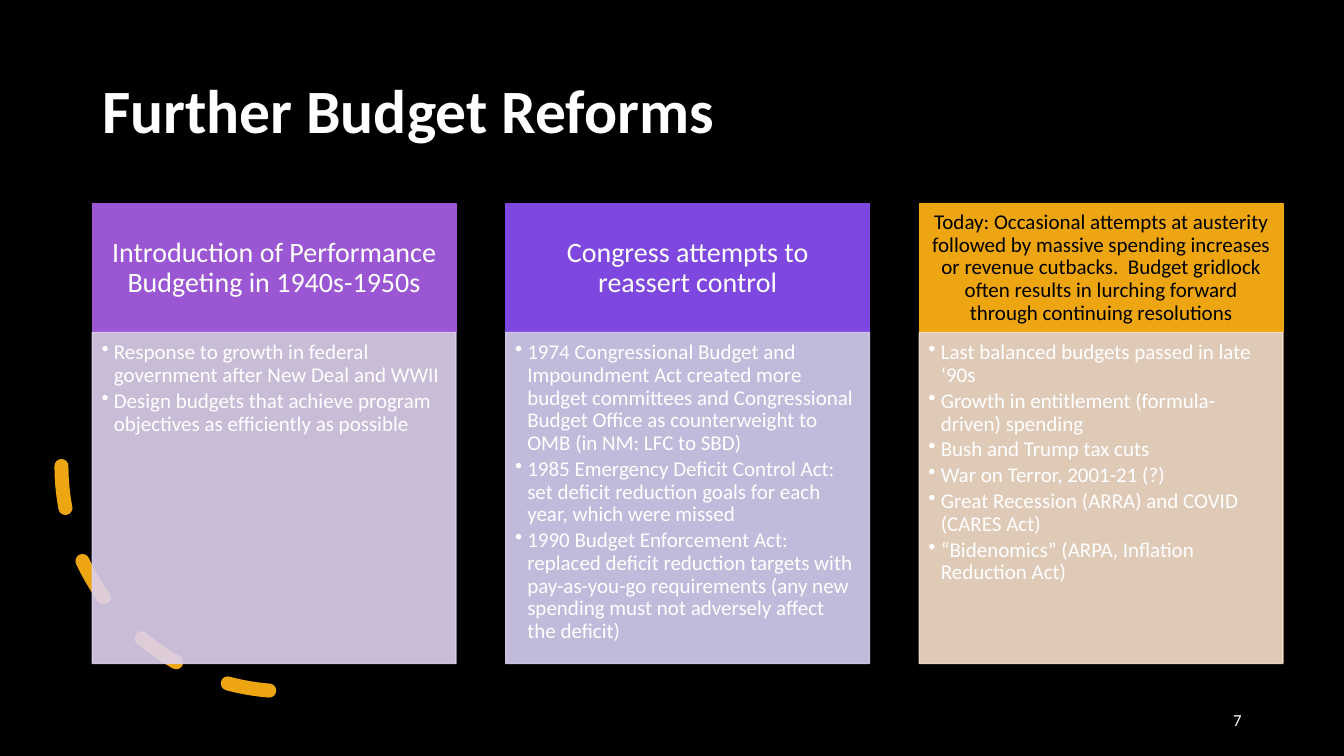
"""Build the slide on further budget reforms."""
from lxml.etree import SubElement
from pptx import Presentation
from pptx.dml.color import RGBColor
from pptx.enum.dml import MSO_LINE
from pptx.enum.shapes import MSO_SHAPE
from pptx.enum.text import MSO_ANCHOR, PP_ALIGN
from pptx.oxml.ns import qn
from pptx.util import Cm, Pt

COLORS = {
    "black": "000000", "white": "FFFFFF", "gold": "EEA512",
    "orchid": "9B57D3", "pale_orchid": "DED1EF",
    "violet": "7E48E0", "pale_violet": "D8CFF3",
    "pale_gold": "F8E1CC",
}

COLUMNS = [
    {
        "heading": "Introduction of Performance Budgeting in 1940s-1950s",
        "heading_format": {"size": 20, "color": "white"},
        "margins": (0.4, 0.23, 0.4, 0.23),
        "fills": ("orchid", "pale_orchid"),
        "points": [
            "Response to growth in federal government after New Deal and WWII",
            "Design budgets that achieve program objectives as efficiently as possible",
        ],
    },
    {
        "heading": "Congress attempts to reassert control",
        "heading_format": {"size": 20, "color": "white"},
        "margins": (0.4, 0.23, 0.4, 0.23),
        "fills": ("violet", "pale_violet"),
        "points": [
            "1974 Congressional Budget and Impoundment Act created more budget committees "
            "and Congressional Budget Office as counterweight to OMB (in NM: LFC to SBD)",
            "1985 Emergency Deficit Control Act: set deficit reduction goals for each year, "
            "which were missed",
            "1990 Budget Enforcement Act: replaced deficit reduction targets with "
            "pay-as-you-go requirements (any new spending must not adversely affect the deficit)",
        ],
    },
    {
        "heading": "Today: Occasional attempts at austerity followed by massive spending "
                   "increases or revenue cutbacks.  Budget gridlock often results in lurching "
                   "forward through continuing resolutions",
        "heading_format": {"size": 15, "color": "black"},
        "margins": (0.3, 0.18, 0.3, 0.18),
        "fills": ("gold", "pale_gold"),
        "points": [
            "Last balanced budgets passed in late ‘90s",
            "Growth in entitlement (formula-driven) spending",
            "Bush and Trump tax cuts",
            "War on Terror, 2001-21 (?)",
            "Great Recession (ARRA) and COVID (CARES Act)",
            "“Bidenomics” (ARPA, Inflation Reduction Act)",
        ],
    },
]


def rgb(name):
    return RGBColor.from_string(COLORS[name])


def write(frame, texts, size=15, color="white", bold=False, align=PP_ALIGN.LEFT,
          anchor=MSO_ANCHOR.MIDDLE, margins=(0.25, 0.13, 0.25, 0.13), bullet=False):
    frame.word_wrap = True
    frame.vertical_anchor = anchor
    (frame.margin_left, frame.margin_top,
     frame.margin_right, frame.margin_bottom) = map(Cm, margins)
    for index, text in enumerate(texts):
        para = frame.paragraphs[0] if index == 0 else frame.add_paragraph()
        para.alignment = align
        para.line_spacing = 0.9
        if bullet:
            para.space_after = Pt(2.25)
            properties = para._p.get_or_add_pPr()
            properties.set("marL", str(Cm(0.31)))
            properties.set("indent", str(-Cm(0.31)))
            SubElement(properties, qn("a:buChar")).set("char", "•")
        span = para.add_run()
        span.text = text
        span.font.name = "Calibri"
        span.font.size = Pt(size)
        span.font.bold = bold
        span.font.color.rgb = rgb(color)


class Page:
    def __init__(self, deck, background):
        self.slide = deck.slides.add_slide(deck.slide_layouts[6])
        self.slide.background.fill.solid()
        self.slide.background.fill.fore_color.rgb = rgb(background)

    def text(self, words, place, **style):
        box = self.slide.shapes.add_textbox(*map(Cm, place))
        write(box.text_frame, [words], **style)

    def dashed_arc(self, place, color):
        arc = self.slide.shapes.add_shape(MSO_SHAPE.ARC, *map(Cm, place))
        arc.shadow.inherit = False
        arc.fill.background()
        arc.rotation = 90
        arc._element.spPr.xfrm.set("flipV", "1")
        arc.line.color.rgb = rgb(color)
        arc.line.width = Pt(10)
        arc.line.dash_style = MSO_LINE.DASH
        arc.line._ln.set("cap", "rnd")

    def panel(self, texts, place, fill, opacity=100, **style):
        box = self.slide.shapes.add_shape(MSO_SHAPE.RECTANGLE, *map(Cm, place))
        box.shadow.inherit = False
        box.line.width = Pt(1)
        box.fill.solid()
        box.fill.fore_color.rgb = rgb(fill)
        box.line.color.rgb = rgb(fill)
        if opacity < 100:
            for tint in box._element.spPr.iter(qn("a:srgbClr")):
                SubElement(tint, qn("a:alpha")).set("val", str(opacity * 1000))
        write(box.text_frame, texts, **style)


def main():
    deck = Presentation()
    deck.slide_width, deck.slide_height = Cm(33.87), Cm(19.05)
    page = Page(deck, "black")
    page.text("Further Budget Reforms", (2.33, 1.01, 29.21, 3.68), size=44, bold=True)
    page.dashed_arc((1.55, 6.07, 11.35, 11.35), "gold")
    left, pitch, width = 2.33, 10.42, 9.16
    top, heading_height, body_height = 5.13, 3.25, 8.34
    for index, column in enumerate(COLUMNS):
        x = left + index * pitch
        strong, pale = column["fills"]
        page.panel([column["heading"]], (x, top, width, heading_height), strong,
                   align=PP_ALIGN.CENTER, margins=column["margins"],
                   **column["heading_format"])
        page.panel(column["points"], (x, top + heading_height, width, body_height), pale,
                   opacity=90, anchor=MSO_ANCHOR.TOP, bullet=True,
                   margins=(0.23, 0.23, 0.3, 0.34))
    page.text("7", (23.92, 17.66, 7.62, 1.01), size=12, align=PP_ALIGN.RIGHT)
    deck.save("out.pptx")


if __name__ == "__main__":
    main()
